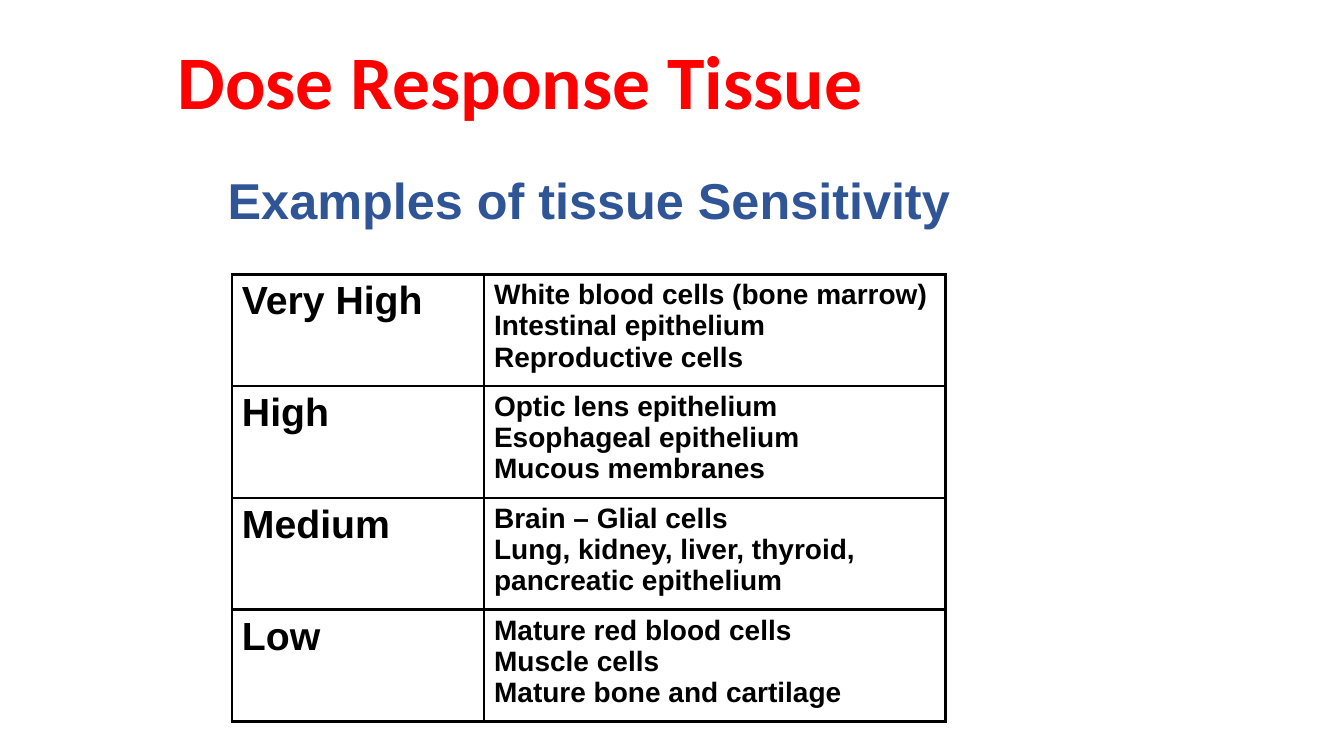
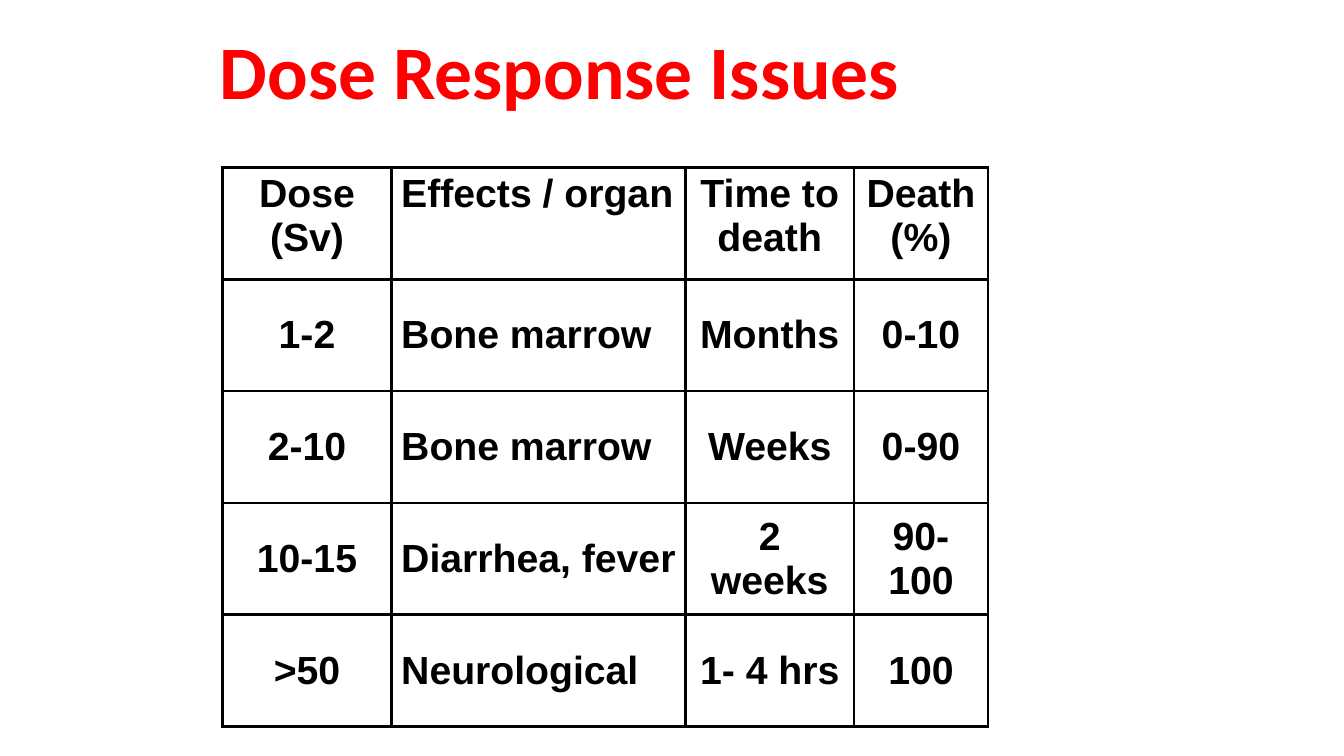
"""Build two slides on dose response: tissue sensitivity and dose effects."""
from lxml.etree import SubElement
from pptx import Presentation
from pptx.dml.color import RGBColor
from pptx.enum.text import MSO_ANCHOR, MSO_AUTO_SIZE, PP_ALIGN
from pptx.oxml.ns import qn
from pptx.util import Inches, Pt

RED, BLUE, BLACK = "FF0000", "2F5597", "000000"
ROW_HEIGHT = 1.11
LEFT, CENTER = PP_ALIGN.LEFT, PP_ALIGN.CENTER
TOP, MIDDLE = MSO_ANCHOR.TOP, MSO_ANCHOR.MIDDLE


def write(text_frame, text, size, color=BLACK, font_name="Arial", alignment=LEFT):
    for index, line in enumerate(text.split("\n")):
        paragraph = text_frame.paragraphs[0] if index == 0 else text_frame.add_paragraph()
        paragraph.alignment = alignment
        run = paragraph.add_run()
        run.text = line
        run.font.name = font_name
        run.font.size = Pt(size)
        run.font.bold = True
        run.font.color.rgb = RGBColor.from_string(color)


def add_bordered_table(slide, left, top, widths, rows, style):
    frame = slide.shapes.add_table(
        len(rows), len(widths), Inches(left), Inches(top),
        Inches(sum(widths)), Inches(ROW_HEIGHT * len(rows)))
    table = frame.table
    table.first_row = False
    table.horz_banding = False
    for column, width in zip(table.columns, widths):
        column.width = Inches(width)
    for row_index, texts in enumerate(rows):
        table.rows[row_index].height = Inches(ROW_HEIGHT)
        for column_index, text in enumerate(texts):
            cell = table.cell(row_index, column_index)
            size, alignment, anchor = style(row_index, column_index)
            cell.vertical_anchor = anchor
            write(cell.text_frame, text, size, alignment=alignment)
            cell.fill.background()
            properties = cell.fill._xPr
            for position, side in enumerate(("a:lnL", "a:lnR", "a:lnT", "a:lnB")):
                border = SubElement(properties, qn(side), w=str(Pt(2.25)))
                solid_fill = SubElement(border, qn("a:solidFill"))
                SubElement(solid_fill, qn("a:srgbClr"), val=BLACK)
                properties.insert(position, border)


presentation = Presentation()
presentation.slide_width = Inches(13.33)
presentation.slide_height = Inches(7.5)

slides = []
for title_text, left, top in (
    ("Dose Response Tissue", 1.66, 0.43),
    ("Dose Response Issues", 2.08, 0.33),
):
    slide = presentation.slides.add_slide(presentation.slide_layouts[5])
    title = slide.shapes.title
    title.left, title.top = Inches(left), Inches(top)
    title.width, title.height = Inches(8.83), Inches(0.83)
    title.text_frame.auto_size = MSO_AUTO_SIZE.NONE
    title.text_frame.vertical_anchor = MIDDLE
    write(title.text_frame, title_text, 54, RED, "Calibri")
    title.text_frame.paragraphs[0].line_spacing = 0.9
    slides.append(slide)
tissue_slide, issues_slide = slides

subtitle = tissue_slide.shapes.add_textbox(Inches(2.16), Inches(1.63), Inches(7.37), Inches(0.7))
subtitle.text_frame.word_wrap = False
subtitle.text_frame.auto_size = MSO_AUTO_SIZE.SHAPE_TO_FIT_TEXT
write(subtitle.text_frame, "Examples of tissue Sensitivity", 36, BLUE)

sensitivity_rows = [
    ("Very High", "White blood cells (bone marrow)\nIntestinal epithelium\nReproductive cells"),
    ("High", "Optic lens epithelium\nEsophageal epithelium\nMucous membranes"),
    ("Medium", "Brain – Glial cells\nLung, kidney, liver, thyroid, pancreatic epithelium"),
    ("Low", "Mature red blood cells\nMuscle cells\nMature bone and cartilage"),
]
add_bordered_table(
    tissue_slide, 2.3, 2.72, (2.5, 4.58), sensitivity_rows,
    lambda row, column: (28 if column == 0 else 20, LEFT, TOP))

dose_rows = [
    ("Dose\n(Sv)", "Effects / organ", "Time to death", "Death\n(%)"),
    ("1-2", "Bone marrow", "Months", "0-10"),
    ("2-10", "Bone marrow", "Weeks", "0-90"),
    ("10-15", "Diarrhea, fever", "2 weeks", "90-100"),
    (">50", "Neurological", "1- 4 hrs", "100"),
]
add_bordered_table(
    issues_slide, 2.21, 1.66, (1.67, 2.92, 1.67, 1.33), dose_rows,
    lambda row, column: (28, LEFT if column == 1 else CENTER, TOP if row == 0 else MIDDLE))

presentation.save("out.pptx")
